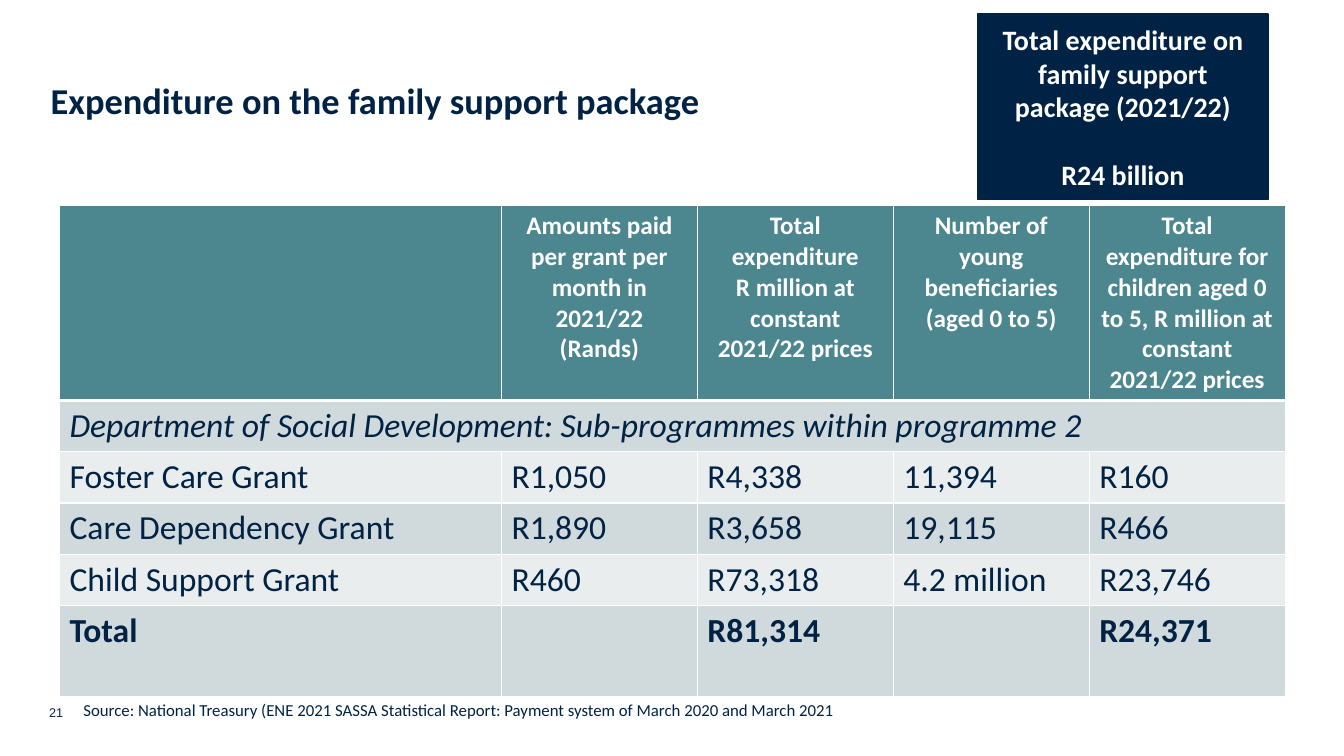
"""Build the slide on expenditure for the family support package."""
import pptx
import pptx.dml.color
import pptx.enum.shapes
import pptx.enum.text
import pptx.oxml
import pptx.oxml.ns
import pptx.util

Pt = pptx.util.Pt
ALIGN = pptx.enum.text.PP_ALIGN
ANCHOR = pptx.enum.text.MSO_ANCHOR
NAVY, WHITE, TEAL = "002345", "FFFFFF", "4C868E"
BANDS = ["D0D9DB", "E9EDEE"]


def colour(value):
    return pptx.dml.color.RGBColor.from_string(value)


def write(frame, text, size, ink=NAVY, bold=False, italic=False, align=ALIGN.LEFT, face="Calibri"):
    for index, line in enumerate(text.split("\n")):
        para = frame.add_paragraph() if index else frame.paragraphs[0]
        para.alignment = align
        span = para.add_run()
        span.text = line
        span.font.name, span.font.size = face, Pt(size)
        span.font.bold, span.font.italic = bold, italic
        span.font.color.rgb = colour(ink)


deck = pptx.Presentation()
deck.slide_width, deck.slide_height = Pt(960), Pt(540)
page = deck.slides.add_slide(deck.slide_layouts[5])

title = page.shapes.title
title.left, title.top, title.width, title.height = Pt(29), Pt(56), Pt(902), Pt(78)
title.text_frame.vertical_anchor = ANCHOR.TOP
title.text_frame.word_wrap = True
write(title.text_frame, "Expenditure on the family support package", 26, bold=True)
title.text_frame.paragraphs[0].line_spacing = 0.9

headings = [
    "",
    "Amounts paid per grant per month in 2021/22\n(Rands)",
    "Total expenditure\nR million at constant 2021/22 prices",
    "Number of young beneficiaries (aged 0 to 5)",
    "Total expenditure for children aged 0 to 5, R million at constant 2021/22 prices",
]
grants = [
    ["Department of Social Development: Sub-programmes within programme 2", "", "", "", ""],
    ["Foster Care Grant", "R1,050", "R4,338", "11,394", "R160"],
    ["Care Dependency Grant", "R1,890", "R3,658", "19,115", "R466"],
    ["Child Support Grant", "R460", "R73,318", "4.2 million", "R23,746"],
    ["Total", "", "R81,314", "", "R24,371"],
]
rows = [headings] + grants
widths = [315.7] + [139.95] * 4
heights = [138.5] + [36.6] * 4 + [65.5]
table = page.shapes.add_table(
    len(rows), len(widths), Pt(42.5), Pt(147), Pt(sum(widths)), Pt(sum(heights))
).table
for column, width in zip(table.columns, widths):
    column.width = Pt(width)
for row, height in zip(table.rows, heights):
    row.height = Pt(height)

for r, texts in enumerate(rows):
    header = r == 0
    for c, text in enumerate(texts):
        cell = table.cell(r, c)
        if text and header:
            write(cell.text_frame, text, 18, WHITE, bold=True, align=ALIGN.CENTER)
        elif text:
            write(cell.text_frame, text, 24, bold=r == len(grants), italic=r == 1)
        properties = cell._tc.get_or_add_tcPr()
        for side in ("lnL", "lnR", "lnT", "lnB"):
            thick = (header and side == "lnB") or (r == 1 and side == "lnT")
            properties.append(pptx.oxml.parse_xml(
                f'<a:{side} {pptx.oxml.ns.nsdecls("a")} w="{Pt(3 if thick else 1)}">'
                f'<a:solidFill><a:srgbClr val="{WHITE}"/></a:solidFill></a:{side}>'
            ))
        cell.fill.solid()
        cell.fill.fore_color.rgb = colour(TEAL if header else BANDS[(r - 1) % 2])
table.cell(1, 0).merge(table.cell(1, 4))

total = page.shapes.add_shape(
    pptx.enum.shapes.MSO_SHAPE.RECTANGLE, Pt(698.4), Pt(10), Pt(207.4), Pt(132.5)
)
total.shadow.inherit = False
total.fill.solid()
total.fill.fore_color.rgb = colour(NAVY)
total.line.color.rgb = colour(NAVY)
total.line.width = Pt(1)
total.text_frame.word_wrap = True
total.text_frame.vertical_anchor = ANCHOR.MIDDLE
write(total.text_frame, "Total expenditure on family support package (2021/22)\nR24 billion",
      20, WHITE, bold=True, align=ALIGN.CENTER)
total.text_frame.paragraphs[1].space_before = Pt(24)

number = page.shapes.add_textbox(Pt(28), Pt(499.7), Pt(113.8), Pt(18))
number.text_frame.word_wrap = True
write(number.text_frame, "21", 9, face="Arial")

source = page.shapes.add_textbox(Pt(52.5), Pt(496.8), Pt(579), Pt(21.6))
source.text_frame.word_wrap = True
write(source.text_frame, "Source: National Treasury (ENE 2021 SASSA Statistical Report: "
      "Payment system of March 2020 and March 2021", 12)
source.text_frame.paragraphs[0].line_spacing = Pt(13.8)

deck.save("out.pptx")
